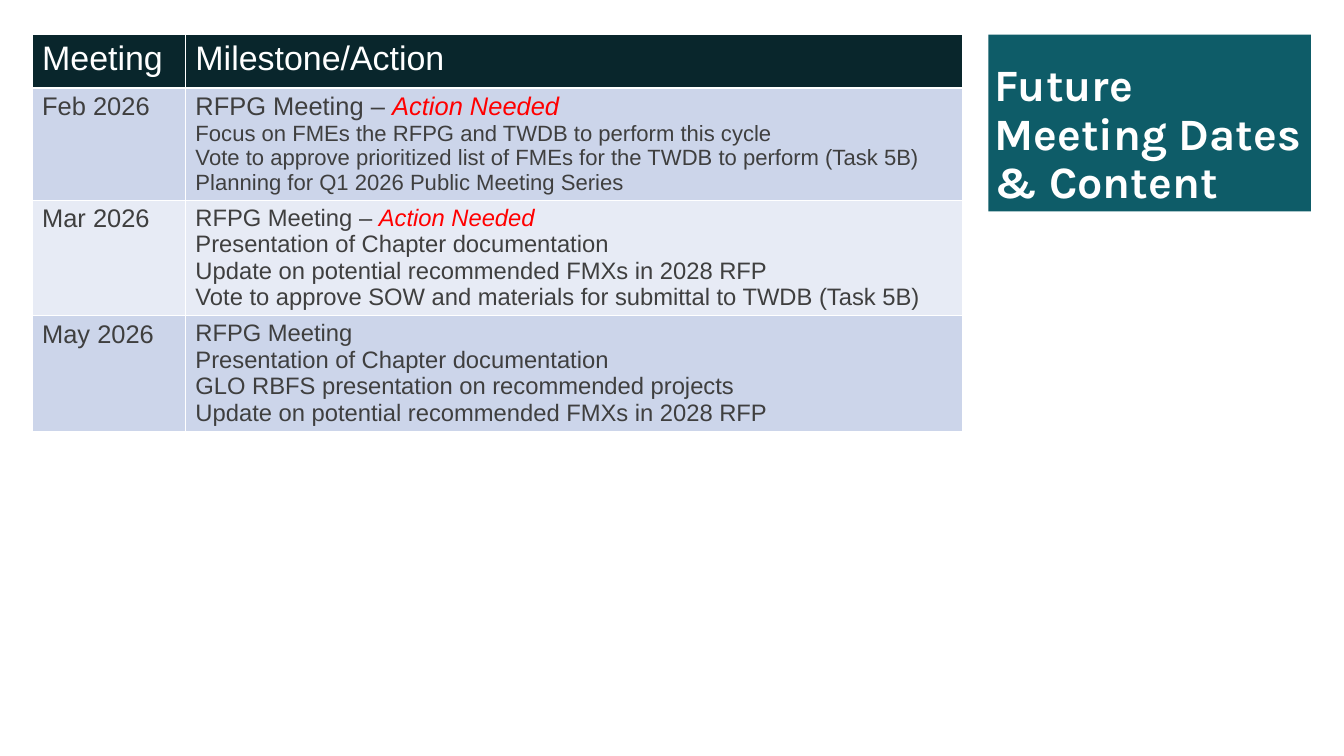
from dataclasses import dataclass

from lxml.etree import SubElement
from pptx import Presentation
from pptx.dml.color import RGBColor
from pptx.enum.shapes import MSO_SHAPE
from pptx.enum.text import MSO_ANCHOR, PP_ALIGN
from pptx.oxml.ns import qn
from pptx.util import Inches, Pt

WIDTH, HEIGHT = Inches(21.99), Inches(12.37)
COLUMNS, ROWS = 220, 124


@dataclass(frozen=True)
class Theme:
    title_font: str = "Karla"
    body_font: str = "Arial"
    title_size: float = 52.8
    header_size: int = 40
    date_size: int = 30
    teal: str = "0E5C68"
    dark: str = "09262C"
    bands: tuple = ("CCD5EA", "E7EBF5")
    white: str = "FFFFFF"
    body: str = "3F3F3F"
    alert: str = "FF0000"


THEME = Theme()
ACTION = "Action Needed"

# Each meeting: date, heading, whether action is needed, heading size, detail size, details
MEETINGS = [
    ("Feb 2026", "RFPG Meeting", True, 30, 26, [
        "Focus on FMEs the RFPG and TWDB to perform this cycle",
        "Vote to approve prioritized list of FMEs for the TWDB to perform (Task 5B)",
        "Planning for Q1 2026 Public Meeting Series"]),
    ("Mar 2026", "RFPG Meeting", True, 28, 28, [
        "Presentation of Chapter documentation",
        "Update on potential recommended FMXs in 2028 RFP",
        "Vote to approve SOW and materials for submittal to TWDB (Task 5B)"]),
    ("May 2026", "RFPG Meeting", False, 28, 28, [
        "Presentation of Chapter documentation",
        "GLO RBFS presentation on recommended projects",
        "Update on potential recommended FMXs in 2028 RFP"]),
]


def x(columns):
    return round(WIDTH * columns / COLUMNS)


def y(rows):
    return round(HEIGHT * rows / ROWS)


def set_attributes(target, values):
    for name, value in values.items():
        setattr(target, name, value)


def set_fill(target, color):
    target.fill.solid()
    target.fill.fore_color.rgb = RGBColor.from_string(color)


def add_run(p, text, size, color, font=THEME.body_font, **style):
    r = p.add_run()
    r.text = text
    set_attributes(r.font, {"name": font, "size": Pt(size), **style})
    r.font.color.rgb = RGBColor.from_string(color)


def set_borders(cell, bottom=1):
    tc_pr = cell._tc.get_or_add_tcPr()
    for side, width in {"L": 1, "R": 1, "T": 1, "B": bottom}.items():
        ln = SubElement(tc_pr, qn(f"a:ln{side}"), w=str(Pt(width)))
        fill = SubElement(ln, qn("a:solidFill"))
        SubElement(fill, qn("a:srgbClr"), val=THEME.white)


def fill_cell(cell, color, paragraphs, bottom=1):
    """Each paragraph is a list of runs: (text, size, color, style)."""
    set_borders(cell, bottom)
    set_fill(cell, color)
    set_attributes(cell, {"margin_left": x(1.6), "margin_right": x(1.6),
                          "margin_top": y(0.8), "margin_bottom": y(0.8)})
    tf = cell.text_frame
    for i, runs in enumerate(paragraphs):
        p = tf.add_paragraph() if i else tf.paragraphs[0]
        for text, size, run_color, style in runs:
            add_run(p, text, size, run_color, **style)


def meeting_paragraphs(heading, action, heading_size, detail_size, details):
    first = [(f"{heading} – " if action else heading, heading_size, THEME.body, {})]
    if action:
        first.append((ACTION, heading_size, THEME.alert, {"italic": True}))
    return [first] + [[(line, detail_size, THEME.body, {})] for line in details]


def add_title(slide, text):
    sp = slide.shapes.add_shape(MSO_SHAPE.RECTANGLE, x(161.8), y(5.7), x(52.8), y(29))
    sp.shadow.inherit = False
    set_fill(sp, THEME.teal)
    sp.line.fill.background()
    tf = sp.text_frame
    set_attributes(tf, {"word_wrap": True, "vertical_anchor": MSO_ANCHOR.BOTTOM,
                        "margin_left": x(1), "margin_right": x(1),
                        "margin_top": y(0.5), "margin_bottom": y(0.5)})
    p = tf.paragraphs[0]
    set_attributes(p, {"alignment": PP_ALIGN.LEFT, "line_spacing": 0.9})
    add_run(p, text, THEME.title_size, THEME.white, THEME.title_font, bold=True)


def add_schedule(slide):
    widths, heights = (25.1, 127.2), (8.7, 16.5, 16.5, 16.5)
    frame = slide.shapes.add_table(len(heights), len(widths), x(5.3), y(5.7),
                                   x(sum(widths)), y(sum(heights)))
    table = frame.table
    set_attributes(table, {"first_row": False, "horz_banding": False})
    for column, width in zip(table.columns, widths):
        column.width = x(width)
    for row, height in zip(table.rows, heights):
        row.height = y(height)

    for i, label in enumerate(("Meeting", "Milestone/Action")):
        header = [[(label, THEME.header_size, THEME.white, {})]]
        fill_cell(table.cell(0, i), THEME.dark, header, bottom=3)
    for i, (date, *content) in enumerate(MEETINGS):
        band = THEME.bands[i % 2]
        date_text = [[(date, THEME.date_size, THEME.body, {})]]
        fill_cell(table.cell(i + 1, 0), band, date_text)
        fill_cell(table.cell(i + 1, 1), band, meeting_paragraphs(*content))


def main():
    prs = Presentation()
    set_attributes(prs, {"slide_width": WIDTH, "slide_height": HEIGHT})
    slide = prs.slides.add_slide(prs.slide_layouts[6])
    add_title(slide, "Future Meeting Dates & Content")
    add_schedule(slide)
    prs.save("out.pptx")


if __name__ == "__main__":
    main()
